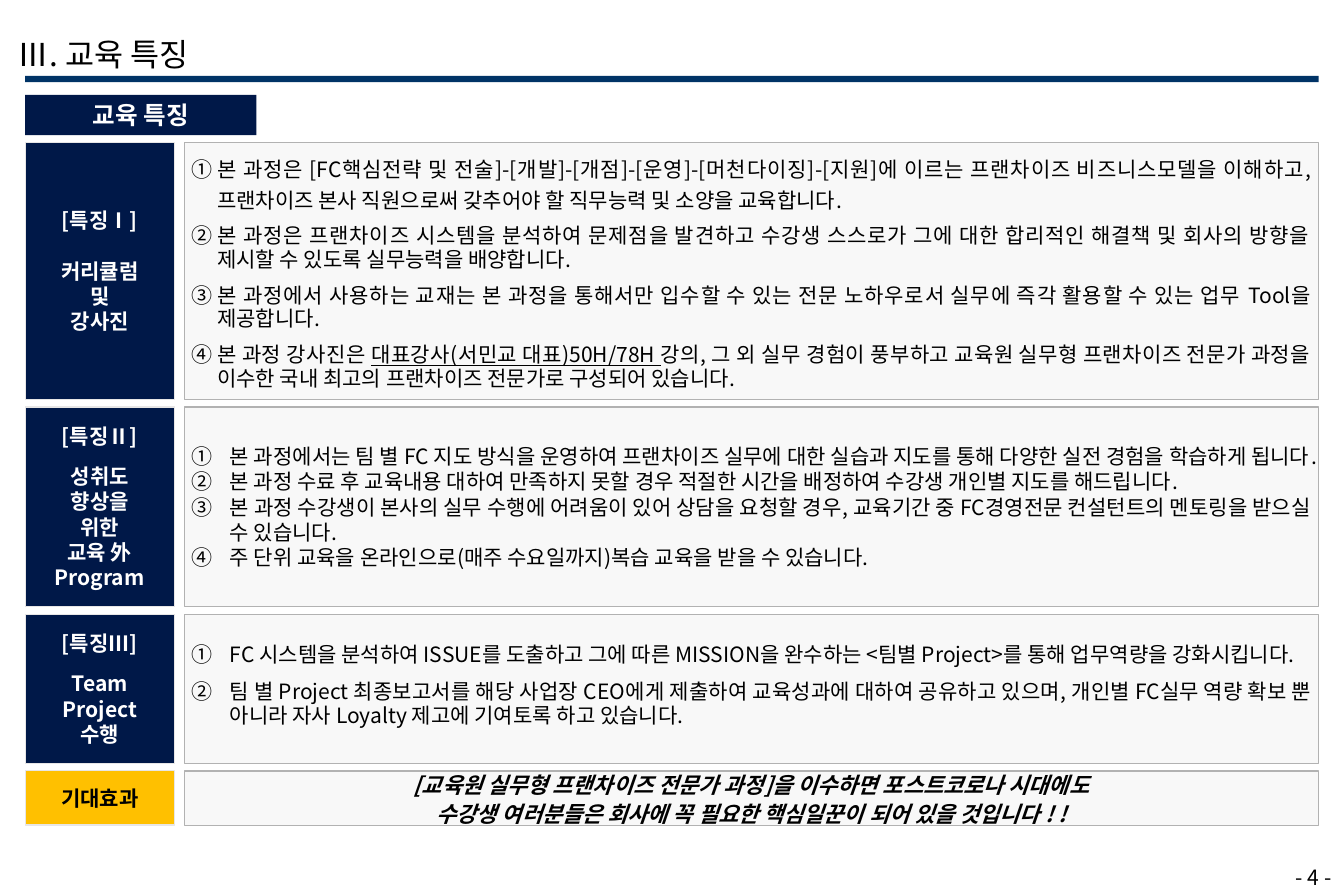
"""Build the course features slide: a title, four labelled panels and a page mark."""
import lxml.etree
import pptx
import pptx.dml.color
import pptx.enum.shapes
import pptx.enum.text
import pptx.oxml.ns
import pptx.util

PX = 9144
FONT = "Noto Sans CJK KR"
NAVY, PALE, BLACK, WHITE = "001848", "F8F8F8", "000000", "FFFFFF"
Pt = pptx.util.Pt
hue = pptx.dml.color.RGBColor.from_string
tag = pptx.oxml.ns.qn
ALIGN = pptx.enum.text.PP_ALIGN
ANCHOR = pptx.enum.text.MSO_ANCHOR
RECT = pptx.enum.shapes.MSO_SHAPE.RECTANGLE


def place(item, box, fill=None, line=None, side=10, base=5):
    """Set the box, fill, line and text frame of a shape."""
    item.left, item.top, item.width, item.height = [n * PX for n in box]
    if fill:
        item.fill.solid()
        item.fill.fore_color.rgb = hue(fill)
    if line:
        item.line.color.rgb = hue(line)
        item.line.width = Pt(0.75)
    else:
        item.line.fill.background()
    frame = item.text_frame
    frame.word_wrap = True
    frame.auto_size = pptx.enum.text.MSO_AUTO_SIZE.NONE
    frame.vertical_anchor = ANCHOR.MIDDLE
    frame.margin_left = frame.margin_right = side * PX
    frame.margin_top, frame.margin_bottom = 5 * PX, base * PX


def style(par, size, color, align, bold=False, gap=0, lead=1.0, hang=0):
    """Format a paragraph and its runs, numbered when it has a hanging indent."""
    props = par._p.get_or_add_pPr()
    props.set("marL", str(hang * PX))
    props.set("indent", str(-hang * PX))
    if hang:
        lxml.etree.SubElement(props, tag("a:buFont")).set("typeface", FONT)
        mark = lxml.etree.SubElement(props, tag("a:buAutoNum"))
        mark.set("type", "circleNumDbPlain")
    else:
        lxml.etree.SubElement(props, tag("a:buNone"))
    par.alignment = align
    par.space_before = Pt(gap)
    par.space_after = Pt(0)
    par.line_spacing = lead
    for run in par.runs:
        run.font.size = Pt(size)
        run.font.bold = bold
        run.font.color.rgb = hue(color)
        run.font.name = FONT
        east = lxml.etree.Element(tag("a:ea"), typeface=FONT)
        run.font._element.find(tag("a:latin")).addnext(east)


deck = pptx.Presentation()
deck.slide_width, deck.slide_height = 1064 * PX, 709 * PX
slide = deck.slides.add_slide(deck.slide_layouts[4])
shapes = slide.shapes

title = shapes.title
place(title, (4, 23, 400, 40))
title.text_frame.vertical_anchor = ANCHOR.TOP
title.text_frame.text = "Ⅲ. 교육 특징"
style(title.text_frame.paragraphs[0], 18, BLACK, ALIGN.LEFT)

rule = shapes.add_shape(RECT, 0, 0, PX, PX)
rule.shadow.inherit = False
place(rule, (20, 60, 1024, 5), "003366")

head = shapes.add_shape(RECT, 0, 0, PX, PX)
head.shadow.inherit = False
place(head, (20, 75, 183, 32), NAVY)
head.text_frame.text = "교육 특징"
style(head.text_frame.paragraphs[0], 14, WHITE, ALIGN.CENTER, True)

TIGHT = Pt(13.5)
ROWS = [
    dict(high=203, label="[특징Ⅰ]\n커리큘럼\n및\n강사진", space=14.4,
         hang=20, gap=6.8, first=1.2, lead=TIGHT, base=5, items=[
             "본 과정은 [FC핵심전략 및 전술]-[개발]-[개점]-[운영]-[머천다이징]-[지원]에 이르는 "
             "프랜차이즈 비즈니스모델을 이해하고,프랜차이즈 본사 직원으로써 갖추어야 할 "
             "직무능력 및 소양을 교육합니다.",
             "본 과정은 프랜차이즈 시스템을 분석하여 문제점을 발견하고 수강생 스스로가 그에 대한 "
             "합리적인 해결책 및 회사의 방향을 제시할 수 있도록 실무능력을 배양합니다.",
             "본 과정에서 사용하는 교재는 본 과정을 통해서만 입수할 수 있는 전문 노하우로서 "
             "실무에 즉각 활용할 수 있는 업무 Tool을 제공합니다.",
             "본 과정 강사진은 |대표강사(서민교 대표)50H/78H |강의, 그 외 실무 경험이 풍부하고 "
             "교육원 실무형 프랜차이즈 전문가 과정을 이수한 국내 최고의 프랜차이즈 전문가로 "
             "구성되어 있습니다."]),
    dict(high=158, label="[특징Ⅱ]\n성취도\n향상을\n위한\n교육 外\nProgram", space=8.4,
         hang=30, gap=0, first=1.0, lead=1.0, base=5, items=[
             "본 과정에서는 팀 별 FC 지도 방식을 운영하여 프랜차이즈 실무에 대한 실습과 지도를 "
             "통해 다양한 실전 경험을 학습하게 됩니다.",
             "본 과정 수료 후 교육내용 대하여 만족하지 못할 경우 적절한 시간을 배정하여 "
             "수강생 개인별 지도를 해드립니다.",
             "본 과정 수강생이 본사의 실무 수행에 어려움이 있어 상담을 요청할 경우, 교육기간 중 "
             "FC경영전문 컨설턴트의 멘토링을 받으실 수 있습니다.",
             "주 단위 교육을 온라인으로(매주 수요일까지)복습 교육을 받을 수 있습니다."]),
    dict(high=118, label="[특징Ⅲ]\nTeam\nProject\n수행", space=8.4,
         hang=30, gap=7.8, first=TIGHT, lead=TIGHT, base=10, items=[
             "FC 시스템을 분석하여 ISSUE를 도출하고 그에 따른 MISSION을 완수하는 "
             "<팀별 Project>를 통해 업무역량을 강화시킵니다.",
             "팀 별 Project 최종보고서를 해당 사업장 CEO에게 제출하여 교육성과에 대하여 "
             "공유하고 있으며, 개인별 FC실무 역량 확보 뿐 아니라 자사 Loyalty 제고에 "
             "기여토록 하고 있습니다."]),
    dict(high=43, label="기대효과", space=0,
         hang=0, gap=0, first=1.1, lead=1.1, base=5, items=[
             "[교육원 실무형 프랜차이즈 전문가 과정]을 이수하면 포스트코로나 시대에도",
             "수강생 여러분들은 회사에 꼭 필요한 핵심일꾼이 되어 있을 것입니다 ! !"]),
]

top = 113
for spot, row in enumerate(ROWS, 1):
    last = row is ROWS[-1]
    label = shapes.add_shape(RECT, 0, 0, PX, PX)
    label.shadow.inherit = False
    place(label, (20, top, 118, row["high"]), "FFC000" if last else NAVY, "E7E6E6")
    label.text_frame.text = row["label"]
    for rank, par in enumerate(label.text_frame.paragraphs):
        style(par, 12, BLACK if last else WHITE, ALIGN.CENTER, True,
              row["space"] if rank == 1 else 0)

    panel = slide.placeholders[spot]
    place(panel, (146, top, 898, row["high"]), PALE, "B2B2B2", 6, row["base"])
    frame = panel.text_frame
    for rank, item in enumerate(row["items"]):
        par = frame.add_paragraph() if rank else frame.paragraphs[0]
        for turn, part in enumerate(item.split("|")):
            run = par.add_run()
            run.text = part
            run.font.underline = turn == 1
            run.font.italic = last
        style(par, 12.5 if last else 12, BLACK,
              ALIGN.CENTER if last else ALIGN.JUSTIFY, last,
              row["gap"] if rank else 0,
              row["lead"] if rank else row["first"], row["hang"])
    top += row["high"] + 6

page = shapes.add_textbox(0, 0, PX, PX)
place(page, (963, 681, 101, 26))
page.text_frame.text = "- 4 -"
style(page.text_frame.paragraphs[0], 12, BLACK, ALIGN.RIGHT)

deck.save("out.pptx")
